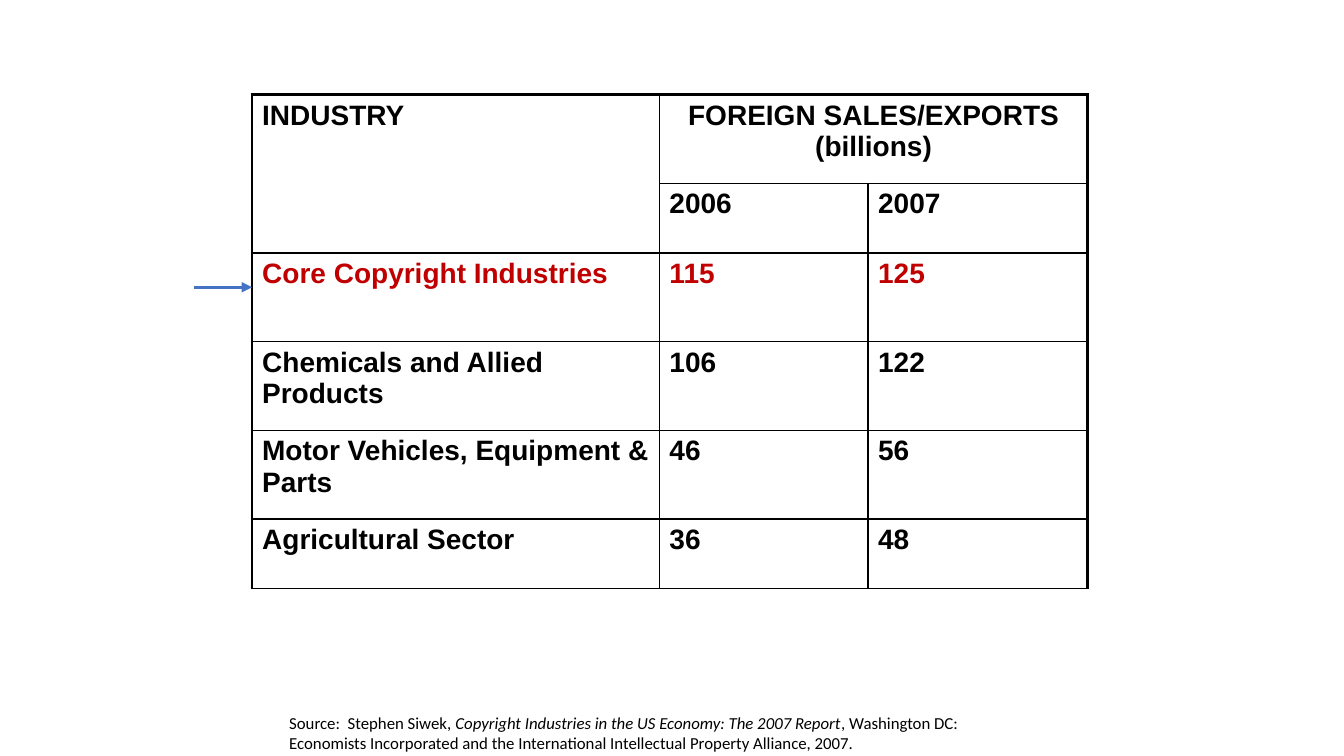
from lxml import etree
from pptx import Presentation
from pptx.dml.color import RGBColor
from pptx.enum.shapes import MSO_CONNECTOR
from pptx.enum.text import PP_ALIGN
from pptx.oxml.ns import qn
from pptx.util import Inches, Pt

STRAIGHT = MSO_CONNECTOR.STRAIGHT
LEFT, CENTER = PP_ALIGN.LEFT, PP_ALIGN.CENTER
BLACK = RGBColor(0x00, 0x00, 0x00)
RED = RGBColor(0xC0, 0x00, 0x00)
BLUE = RGBColor(0x44, 0x72, 0xC4)

# Content
ROWS = [
    ("INDUSTRY", "FOREIGN SALES/EXPORTS (billions)", ""),
    ("", "2006", "2007"),
    ("Core Copyright Industries", "115", "125"),
    ("Chemicals and Allied Products", "106", "122"),
    ("Motor Vehicles, Equipment & Parts", "46", "56"),
    ("Agricultural Sector", "36", "48"),
]
HIGHLIGHT_ROW = 2
SOURCE = [  # text, italic
    ("Source:  Stephen Siwek, ", False),
    ("Copyright Industries in the US Economy: The 2007 Report", True),
    (", Washington DC: Economists Incorporated and the International "
     "Intellectual Property Alliance, 2007.", False),
]

# Layout
TABLE_LEFT, TABLE_TOP = 2.5, 0.94
COLUMN_WIDTHS = [4.04, 2.07, 2.18]
ROW_HEIGHTS = [0.88, 0.69, 0.88, 0.88, 0.88, 0.69]
THIN, THICK = Pt(1), Pt(2.25)
ARROW_LENGTH, ARROW_Y = 0.58, 2.85


def set_borders(cell, widths):
    """Draw black cell borders; widths are in left, right, top, bottom order."""
    properties = cell._tc.get_or_add_tcPr()
    for side, width in zip("LRTB", widths):
        line = etree.SubElement(properties, qn(f"a:ln{side}"), w=str(width))
        fill = etree.SubElement(line, qn("a:solidFill"))
        etree.SubElement(fill, qn("a:srgbClr"), val=str(BLACK))


def add_industry_table(page):
    frame = page.shapes.add_table(
        len(ROWS), len(COLUMN_WIDTHS), Inches(TABLE_LEFT), Inches(TABLE_TOP),
        Inches(sum(COLUMN_WIDTHS)), Inches(sum(ROW_HEIGHTS)))
    table = frame.table
    table.first_row = table.horz_banding = False
    for column, width in zip(table.columns, COLUMN_WIDTHS):
        column.width = Inches(width)
    for row, height in zip(table.rows, ROW_HEIGHTS):
        row.height = Inches(height)
    table.cell(0, 0).merge(table.cell(1, 0))
    table.cell(0, 1).merge(table.cell(0, 2))

    last_column = len(COLUMN_WIDTHS) - 1
    for r, texts in enumerate(ROWS):
        for c, text in enumerate(texts):
            cell = table.cell(r, c)
            right_edge = c == last_column or (r == 0 and c > 0)
            set_borders(cell, (THICK if c == 0 else THIN,
                               THICK if right_edge else THIN,
                               THICK if r == 0 else THIN,
                               THIN))
            cell.fill.background()
            if cell.is_spanned:
                continue
            cell.text = text
            para = cell.text_frame.paragraphs[0]
            para.alignment = CENTER if (r, c) == (0, 1) else LEFT
            para.font.name = "Arial"
            para.font.size = Pt(20)
            para.font.bold = True
            para.font.color.rgb = RED if r == HIGHLIGHT_ROW else BLACK


def add_source(page):
    box = page.shapes.add_textbox(Inches(2.77), Inches(7.02), Inches(7.4), Inches(0.96))
    box.text_frame.word_wrap = True
    para = box.text_frame.paragraphs[0]
    para.font.name = "Calibri"
    para.font.size = Pt(12)
    para.font.color.rgb = BLACK
    for text, italic in SOURCE:
        span = para.add_run()
        span.text = text
        span.font.italic = italic


def add_arrow(page):
    arrow = page.shapes.add_connector(
        STRAIGHT, Inches(TABLE_LEFT - ARROW_LENGTH), Inches(ARROW_Y),
        Inches(TABLE_LEFT), Inches(ARROW_Y))
    arrow.line.color.rgb = BLUE
    arrow.line.width = Pt(2.5)
    etree.SubElement(arrow.line._get_or_add_ln(), qn("a:tailEnd"), type="triangle")
    etree.SubElement(arrow._element.spPr, qn("a:effectLst"))


def main():
    deck = Presentation()
    deck.slide_width, deck.slide_height = Inches(13.33), Inches(7.5)
    page = deck.slides.add_slide(deck.slide_layouts[6])  # blank layout
    add_industry_table(page)
    add_source(page)
    add_arrow(page)
    deck.save("out.pptx")


if __name__ == "__main__":
    main()
